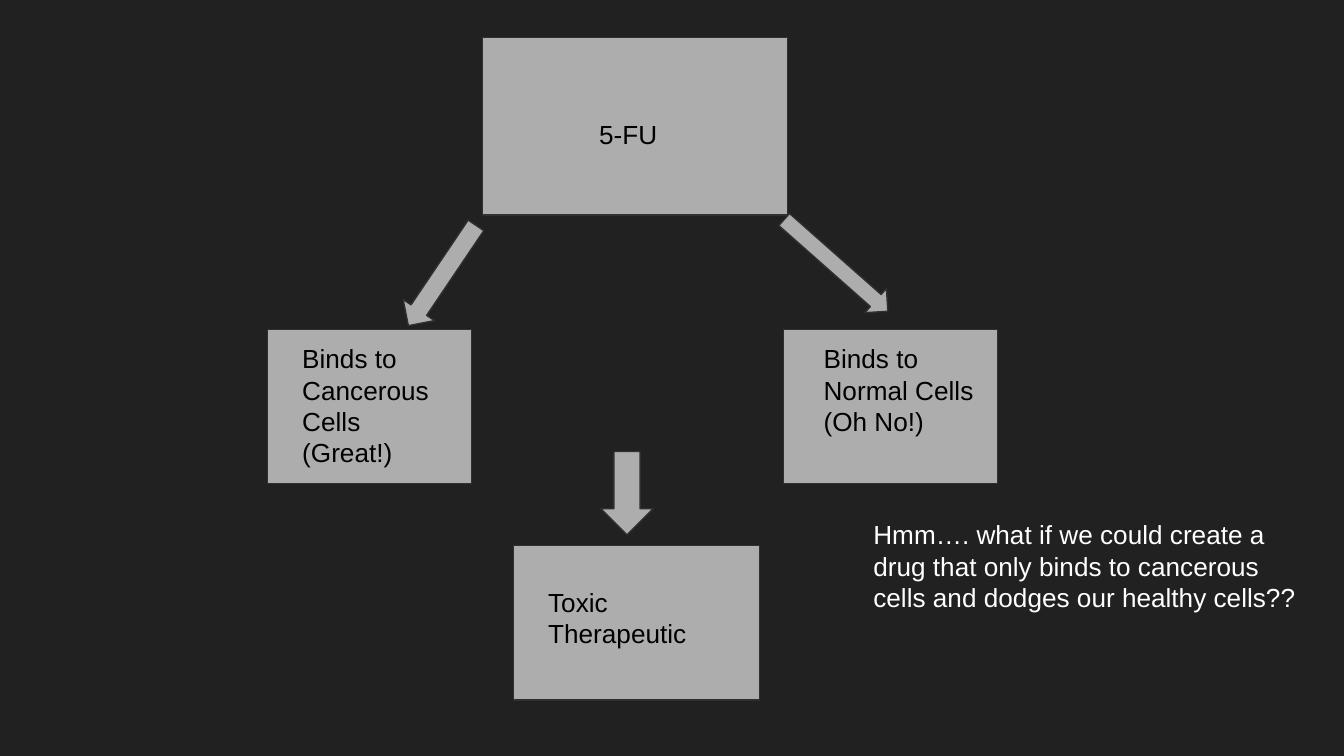
from typing import NamedTuple

from pptx import Presentation
from pptx.dml.color import RGBColor as Rgb
from pptx.enum.shapes import MSO_SHAPE as Kind
from pptx.enum.text import MSO_AUTO_SIZE as Fit
from pptx.util import Inches, Pt

COLORS = {
    "back": "212121",
    "fill": "ADADAD",
    "edge": "303030",
    "dark": "000000",
    "light": "FFFFFF",
}


class Area(NamedTuple):
    left: float
    top: float
    width: float
    height: float


class Arrow(NamedTuple):
    area: Area
    turn: float


class Label(NamedTuple):
    area: Area
    lines: tuple[str, ...]
    color: str = "dark"


ROW = 2.45
SIDE = 1.15

BOXES = [
    Area(3.59, 0.28, 2.27, 1.32),
    Area(1.99, ROW, 1.52, SIDE),
    Area(5.83, ROW, 1.59, SIDE),
    Area(3.82, 4.06, 1.83, SIDE),
]
ARROWS = [
    Arrow(Area(3.15, 1.6, 0.28, 0.9), 214),
    Arrow(Area(6.1, 1.46, 0.24, 1.03), 131.5),
    Arrow(Area(4.47, 3.36, 0.39, 0.62), 180),
]
LABELS = [
    Label(Area(4.36, 0.78, 0.75, 0.44), ("5-FU",)),
    Label(Area(2.15, ROW, 1.21, 1.14), ("Binds to Cancerous Cells (Great!)",)),
    Label(Area(6.03, ROW, 1.33, 0.91), ("Binds to Normal Cells", "(Oh No!)")),
    Label(Area(3.98, 4.26, 1.59, 0.67), ("Toxic Therapeutic",)),
    Label(
        Area(6.4, 3.76, 3.4, 0.91),
        ("Hmm…. what if we could create a drug that only binds to "
         "cancerous cells and dodges our healthy cells??",),
        "light",
    ),
]


def tint(name: str) -> Rgb:
    return Rgb.from_string(COLORS[name])


def draw_shape(slide, kind: Kind, area: Area, turn: float = 0) -> None:
    shape = slide.shapes.add_shape(kind, *map(Inches, area))
    shape.rotation = turn
    shape.shadow.inherit = False
    shape.fill.solid()
    shape.fill.fore_color.rgb = tint("fill")
    shape.line.color.rgb = tint("edge")
    shape.line.width = Pt(0.75)


def draw_label(slide, label: Label) -> None:
    frame = slide.shapes.add_textbox(*map(Inches, label.area)).text_frame
    frame.word_wrap = True
    frame.auto_size = Fit.SHAPE_TO_FIT_TEXT
    frame.margin_left = frame.margin_right = Inches(0.1)
    frame.margin_top = frame.margin_bottom = Inches(0.1)
    frame.text = "\n".join(label.lines)
    for para in frame.paragraphs:
        para.font.name = "Arial"
        para.font.size = Pt(14)
        para.font.color.rgb = tint(label.color)


def main() -> None:
    deck = Presentation()
    deck.slide_width = Inches(10)
    deck.slide_height = deck.slide_width * 9 // 16
    blank = deck.slide_layouts[6]
    slide = deck.slides.add_slide(blank)
    slide.background.fill.solid()
    slide.background.fill.fore_color.rgb = tint("back")

    for box in BOXES:
        draw_shape(slide, Kind.RECTANGLE, box)
    for arrow in ARROWS:
        draw_shape(slide, Kind.UP_ARROW, arrow.area, arrow.turn)
    for label in LABELS:
        draw_label(slide, label)

    deck.save("out.pptx")


if __name__ == "__main__":
    main()
